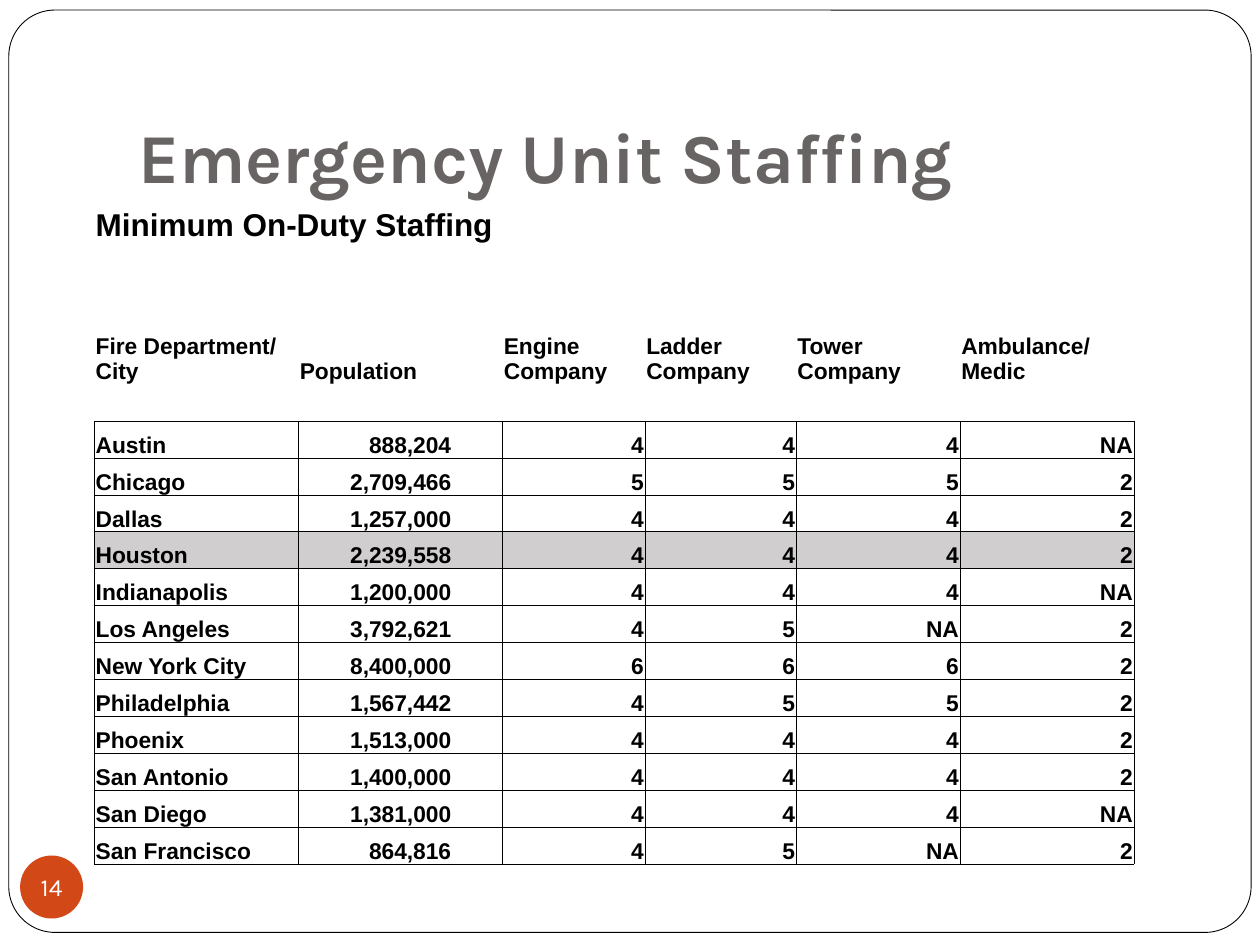
from lxml.etree import SubElement
from pptx import Presentation
from pptx.dml.color import RGBColor
from pptx.enum.shapes import MSO_SHAPE
from pptx.enum.text import MSO_ANCHOR, PP_ALIGN
from pptx.oxml.ns import qn
from pptx.util import Inches, Pt

HEAD = ["Fire Department/ City", "Population", "Engine Company",
        "Ladder Company", "Tower Company", "Ambulance/Medic"]
CITIES = [
    ("Austin", "888,204", "4", "4", "4", "NA"),
    ("Chicago", "2,709,466", "5", "5", "5", "2"),
    ("Dallas", "1,257,000", "4", "4", "4", "2"),
    ("Houston", "2,239,558", "4", "4", "4", "2"),
    ("Indianapolis", "1,200,000", "4", "4", "4", "NA"),
    ("Los Angeles", "3,792,621", "4", "5", "NA", "2"),
    ("New York City", "8,400,000", "6", "6", "6", "2"),
    ("Philadelphia", "1,567,442", "4", "5", "5", "2"),
    ("Phoenix", "1,513,000", "4", "4", "4", "2"),
    ("San Antonio", "1,400,000", "4", "4", "4", "2"),
    ("San Diego", "1,381,000", "4", "4", "4", "NA"),
    ("San Francisco", "864,816", "4", "5", "NA", "2"),
]
WIDTHS = [16.2, 16.2, 11.3, 12, 13, 13.8]
HEIGHTS = [4.3, 2.4, 8.8] + [2.93] * 13
LEFT, RIGHT, MID = PP_ALIGN.LEFT, PP_ALIGN.RIGHT, PP_ALIGN.CENTER


def tint(code):
    return RGBColor.from_string(code)


class Deck:
    """Style and current slide, laid out on a grid of 100 columns by 75 rows."""

    ink, grey, accent, shade, white = "000000", "696464", "D34817", "D0CECE", "FFFFFF"
    sans, show = "Arial", "Karla"

    def __init__(self):
        self.prs = Presentation()
        self.prs.slide_width, self.prs.slide_height = Inches(10), Inches(7.5)
        self.step = self.prs.slide_width / 100
        self.slide = self.prs.slides.add_slide(self.prs.slide_layouts[5])

    def span(self, *cells):
        return [round(n * self.step) for n in cells]

    def label(self, frame, text, size, font, color, bold=False, align=LEFT):
        frame.text = text
        para = frame.paragraphs[0]
        para.alignment = align
        for run in para.runs:
            run.font.size, run.font.name, run.font.bold = Pt(size), font, bold
            run.font.color.rgb = tint(color)

    def inset(self, frame, *sides):
        (frame.margin_left, frame.margin_top,
         frame.margin_right, frame.margin_bottom) = self.span(*sides)

    def shape(self, kind, place, fill, line=None):
        item = self.slide.shapes.add_shape(kind, *self.span(*place))
        item.shadow.inherit = False
        item.fill.solid()
        item.fill.fore_color.rgb = tint(fill)
        if line:
            item.line.color.rgb, item.line.width = tint(line), Pt(0.5)
        else:
            item.line.fill.background()
        return item

    def frame(self, *place):
        item = self.shape(MSO_SHAPE.ROUNDED_RECTANGLE, place, self.white, self.ink)
        item.adjustments[0] = 0.05
        self.slide.shapes._spTree.insert(2, item._element)

    def title(self, text, *place):
        item = self.slide.shapes.title
        item.left, item.top, item.width, item.height = self.span(*place)
        frame = item.text_frame
        self.label(frame, text, 40, self.show, self.grey, True)
        self.inset(frame, 1, 0.5, 1, 1)
        frame.vertical_anchor = MSO_ANCHOR.BOTTOM

    def badge(self, text, *place):
        frame = self.shape(MSO_SHAPE.OVAL, place, self.accent).text_frame
        self.label(frame, text, 14, self.show, self.white, align=MID)
        self.inset(frame, 0, 0, 0, 0)
        frame.word_wrap = False
        frame.vertical_anchor = MSO_ANCHOR.MIDDLE

    def edge(self, cell, sides):
        props = cell._tc.get_or_add_tcPr()
        for side in "LRTB":
            line = SubElement(props, qn("a:ln" + side), w=str(Pt(0.5)))
            if side in sides:
                fill = SubElement(line, qn("a:solidFill"))
                SubElement(fill, qn("a:srgbClr"), val=self.ink)
            else:
                SubElement(line, qn("a:noFill"))

    def cell(self, cell, text, size=13, align=LEFT, pad=0.1, sides="", fill=None):
        self.edge(cell, sides)
        if fill:
            cell.fill.solid()
            cell.fill.fore_color.rgb = tint(fill)
        else:
            cell.fill.background()
        self.inset(cell, 0.1, 0.1, pad, 0)
        cell.vertical_anchor = MSO_ANCHOR.BOTTOM
        self.label(cell.text_frame, text, size, self.sans, self.ink, True, align)
        if not text:
            para = cell.text_frame.paragraphs[0]._p
            SubElement(para, qn("a:endParaRPr"), sz="1000")

    def table(self, left, top, caption):
        rows, cols = len(HEIGHTS), len(WIDTHS)
        place = self.span(left, top, sum(WIDTHS), sum(HEIGHTS))
        grid = self.slide.shapes.add_table(rows, cols, *place).table
        grid.first_row = grid.horz_banding = False
        for col, wide in zip(grid.columns, self.span(*WIDTHS)):
            col.width = wide
        for row, high in zip(grid.rows, self.span(*HEIGHTS)):
            row.height = high
        blank = [""] * cols
        for r, line in enumerate([[caption] + blank[1:], blank, HEAD, blank]):
            for c, text in enumerate(line):
                self.cell(grid.cell(r, c), text, 13 if r else 18,
                          sides="B" if r == 3 else "")
        for r, line in enumerate(CITIES, 4):
            fill = self.shade if line[0] == "Houston" else None
            for c, text in enumerate(line):
                self.cell(grid.cell(r, c), text, align=RIGHT if c else LEFT,
                          pad=4.1 if c == 1 else 0.1, sides="LRTB", fill=fill)
        grid.cell(0, 0).merge(grid.cell(0, 2))


def main():
    deck = Deck()
    deck.frame(0.7, 0.8, 98.6, 73.2)
    deck.title("Emergency Unit Staffing", 10, 3, 85, 13.7)
    deck.badge("14", 1.6, 67.9, 5, 5)
    deck.table(7.5, 15, "Minimum On-Duty Staffing")
    deck.prs.save("out.pptx")


if __name__ == "__main__":
    main()
